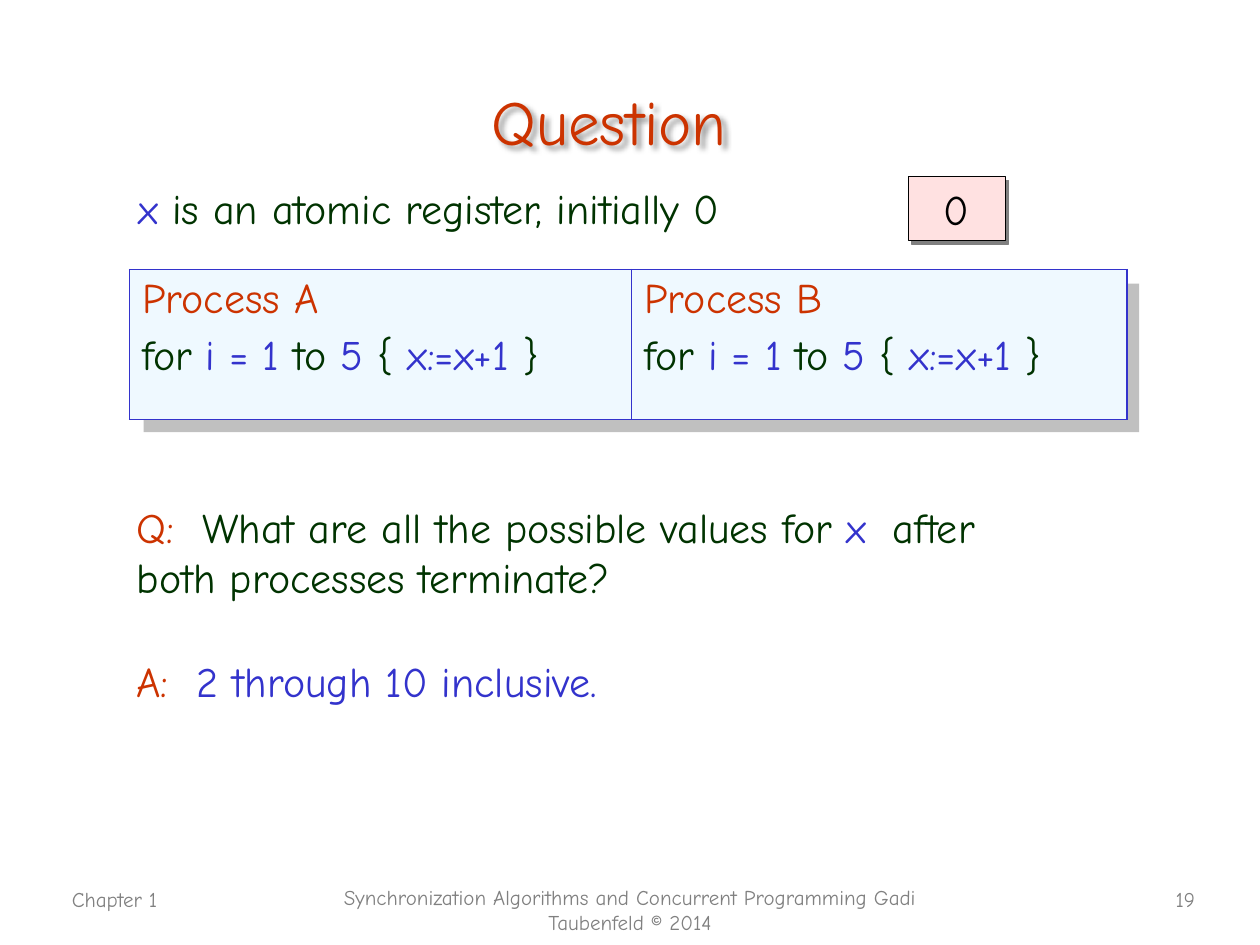
import pptx
import pptx.util
import pptx.dml.color
import pptx.enum.shapes
import pptx.enum.text
import pptx.oxml
import pptx.oxml.ns

Pt = pptx.util.Pt
ALIGN = pptx.enum.text.PP_ALIGN
ANCHOR = pptx.enum.text.MSO_ANCHOR
FONT = "Comic Neue"
RED, GREEN, BLUE = "CC3300", "003300", "3333CC"
GRAY, BLACK = "808080", "000000"
HANGING = 27
LOOP = [("for", GREEN), (" i = 1 ", BLUE), ("to", GREEN), (" 5 ", BLUE),
        ("{ ", GREEN), ("x:=x+1 ", BLUE), ("}", GREEN)]


def color(value):
    return pptx.dml.color.RGBColor.from_string(value)


def paint(target, value):
    target.fill.solid()
    target.fill.fore_color.rgb = color(value)


def place(box, left, top, width, height):
    box.left, box.top, box.width, box.height = map(Pt, (left, top, width, height))


def write(para, spans, size=24, align=ALIGN.LEFT, before=0):
    para.alignment = align
    para.space_before = Pt(before)
    para.font.size = Pt(size)
    para.font.name = FONT
    for text, value in spans:
        span = para.add_run()
        span.text = text
        span.font.color.rgb = color(value)


def hang(para):
    properties = para._p.get_or_add_pPr()
    properties.set("marL", str(Pt(HANGING)))
    properties.set("indent", str(Pt(-HANGING)))
    bullet = pptx.oxml.parse_xml(f'<a:buNone {pptx.oxml.ns.nsdecls("a")}/>')
    properties.insert_element_before(bullet, "a:tabLst", "a:defRPr", "a:extLst")


def cast_shadow(shape, value, opacity, blur, distance):
    shape.shadow.inherit = False
    effects = shape._element.spPr.find(pptx.oxml.ns.qn("a:effectLst"))
    effects.append(pptx.oxml.parse_xml(
        f'<a:outerShdw {pptx.oxml.ns.nsdecls("a")} blurRad="{Pt(blur)}" '
        f'dist="{Pt(distance)}" dir="2700000" algn="ctr" rotWithShape="0">'
        f'<a:srgbClr val="{value}"><a:alpha val="{opacity * 1000}"/></a:srgbClr>'
        '</a:outerShdw>'))


def add_text(page, bounds, spans, **style):
    box = page.shapes.add_textbox(*map(Pt, bounds))
    box.text_frame.word_wrap = True
    para = box.text_frame.paragraphs[0]
    write(para, spans, **style)
    return para


def add_rectangle(page, bounds, fill):
    box = page.shapes.add_shape(pptx.enum.shapes.MSO_SHAPE.RECTANGLE, *map(Pt, bounds))
    box.shadow.inherit = False
    paint(box, fill)
    box.line.fill.background()
    return box


def border_cell(cell):
    properties = cell._tc.get_or_add_tcPr()
    for index, side in enumerate(("lnL", "lnR", "lnT", "lnB")):
        properties.insert(index, pptx.oxml.parse_xml(
            f'<a:{side} {pptx.oxml.ns.nsdecls("a")} w="{Pt(1)}"><a:solidFill>'
            f'<a:srgbClr val="{BLUE}"/></a:solidFill></a:{side}>'))


def add_processes(page):
    add_rectangle(page, (82, 162, 569, 85), "C0C0C0")
    frame = page.shapes.add_table(1, 2, Pt(74), Pt(154), Pt(570), Pt(85.7))
    table = frame.table
    table.first_row = table.horz_banding = False
    for column, width, name in zip(table.columns, (287, 283), "AB"):
        column.width = Pt(width)
        cell = table.cell(0, "AB".index(name))
        paint(cell, "EFF9FF")
        border_cell(cell)
        write(cell.text_frame.paragraphs[0], [(f"Process {name}", RED)], before=4.8)
        write(cell.text_frame.add_paragraph(), LOOP, before=4.8)


def add_title(page):
    title = page.shapes.title
    place(title, 42, 35, 612, 67)
    title.text_frame.vertical_anchor = ANCHOR.MIDDLE
    write(title.text_frame.paragraphs[0], [("Question", RED)], 36, ALIGN.CENTER)
    cast_shadow(title, BLACK, 40, 3, 3)


def add_question(page):
    body = page.placeholders[1]
    place(body, 44, 283, 557, 70)
    body.text_frame.auto_size = pptx.enum.text.MSO_AUTO_SIZE.NONE
    para = body.text_frame.paragraphs[0]
    write(para, [("\t", GREEN), ("Q:", RED),
                 ("  What are all the possible values for ", GREEN), ("x", BLUE),
                 (" \tafter both processes terminate?", GREEN)], before=4.8)
    hang(para)


def add_register(page):
    box = add_rectangle(page, (519, 101, 55.5, 36.5), "FFE1E1")
    box.line.color.rgb = color(BLACK)
    box.line.width = Pt(0.75)
    cast_shadow(box, GRAY, 100, 0, 2.8)
    box.text_frame.vertical_anchor = ANCHOR.MIDDLE
    write(box.text_frame.paragraphs[0], [("0", BLACK)], align=ALIGN.CENTER)


def add_footer(page):
    for bounds, text, align in (
            ((34, 503, 150, 36), "Chapter 1", ALIGN.LEFT),
            ((186, 502, 348, 36), "Synchronization Algorithms and Concurrent "
             "Programming Gadi Taubenfeld © 2014", ALIGN.CENTER),
            ((656, 503, 34, 22), "19", ALIGN.RIGHT)):
        add_text(page, bounds, [(text, GRAY)], size=12, align=align)


def main():
    deck = pptx.Presentation()
    deck.slide_width, deck.slide_height = Pt(720), Pt(540)
    page = deck.slides.add_slide(deck.slide_layouts[1])
    add_footer(page)
    add_title(page)
    add_processes(page)
    hang(add_text(page, (72, 101, 568, 32),
                  [("x", BLUE), (" is an atomic register, initially 0", GREEN)], before=4.8))
    add_question(page)
    hang(add_text(page, (44, 371, 557, 70),
                  [("\t", GREEN), ("A:  ", RED), ("2 through 10 inclusive.", BLUE)], before=4.8))
    add_register(page)
    deck.save("out.pptx")


if __name__ == "__main__":
    main()
